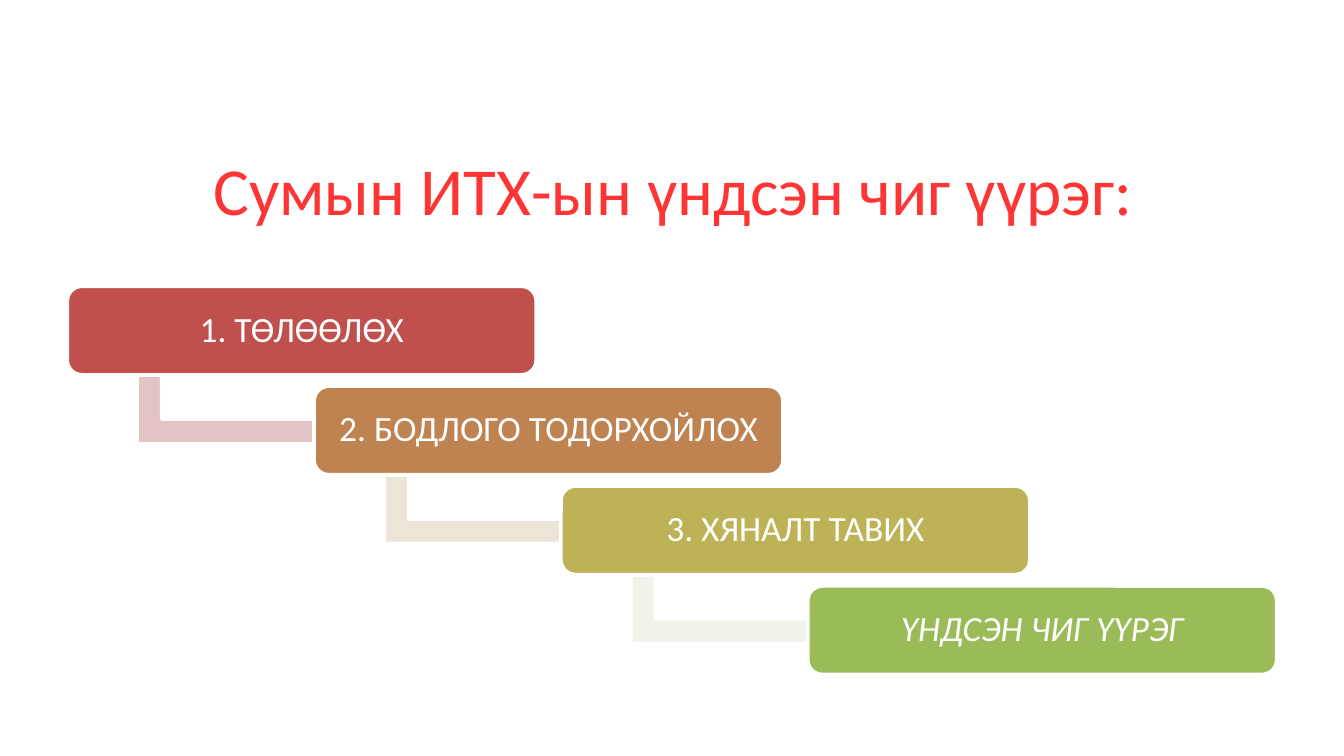
from pptx import Presentation
from pptx.dml.color import RGBColor
from pptx.enum import shapes, text
from pptx.util import Inches, Pt

WHITE = "FFFFFF"
CARD_WIDTH, CARD_HEIGHT = 3.49, 0.66
ARROW_WIDTH, ARROW_LENGTH = 0.56, 2.36

# Label, card colour, colour of the arrow to the next card, italic
STEPS = [
    ("1. ТӨЛӨӨЛӨХ", "C0504D", "E2C2C2", False),
    ("2. БОДЛОГО ТОДОРХОЙЛОХ", "BE8351", "EAE5D6", False),
    ("3. ХЯНАЛТ ТАВИХ", "BDB255", "EFF3EA", False),
    ("ҮНДСЭН ЧИГ ҮҮРЭГ", "9BBB59", None, True),
]


def color(hex_value):
    return RGBColor.from_string(hex_value)


def format_paragraph(paragraph, size, hex_value, italic=False):
    paragraph.alignment = text.PP_ALIGN.CENTER
    font = paragraph.font
    font.name, font.size, font.italic = "Calibri", Pt(size), italic
    font.color.rgb = color(hex_value)


def add_filled_shape(slide, kind, left, top, width, height, fill, adjustments):
    shape = slide.shapes.add_shape(
        kind, Inches(left), Inches(top), Inches(width), Inches(height))
    shape.shadow.inherit = False
    shape.fill.solid()
    shape.fill.fore_color.rgb = color(fill)
    shape.line.color.rgb = color(WHITE)
    shape.line.width = Pt(2)
    for index, value in enumerate(adjustments):
        shape.adjustments[index] = value
    return shape


def add_title(slide, left, top, width, height):
    title = slide.shapes.title
    title.left, title.top = Inches(left), Inches(top)
    title.width, title.height = Inches(width), Inches(height)
    frame = title.text_frame
    frame.text = "Сумын ИТХ-ын үндсэн чиг үүрэг:"
    frame.word_wrap = True
    frame.vertical_anchor = text.MSO_ANCHOR.MIDDLE
    format_paragraph(frame.paragraphs[0], 36, "FD3535")


def add_card(slide, left, top, label, fill, italic):
    card = add_filled_shape(slide, shapes.MSO_SHAPE.ROUNDED_RECTANGLE,
                            left, top, CARD_WIDTH, CARD_HEIGHT, fill, [0.167])
    frame = card.text_frame
    frame.text = label
    frame.word_wrap = True
    frame.vertical_anchor = text.MSO_ANCHOR.MIDDLE
    frame.margin_left = frame.margin_right = Inches(0.08)
    frame.margin_top = frame.margin_bottom = Inches(0.08)
    paragraph = frame.paragraphs[0]
    paragraph.line_spacing = 0.9
    format_paragraph(paragraph, 19, WHITE, italic)


def add_staircase(slide, left, top, width, height):
    step_x = (width - CARD_WIDTH) / (len(STEPS) - 1)
    step_y = (height - CARD_HEIGHT) / (len(STEPS) - 1)
    for index, (label, fill, arrow_fill, italic) in enumerate(STEPS):
        card_left, card_top = left + index * step_x, top + index * step_y
        # The arrow runs under the next card, which hides its head
        if arrow_fill:
            arrow = add_filled_shape(
                slide, shapes.MSO_SHAPE.BENT_UP_ARROW,
                card_left + 1.42, card_top - 0.24, ARROW_WIDTH, ARROW_LENGTH,
                arrow_fill, [0.328, 0.25, 0.358])
            arrow.rotation = 90
        add_card(slide, card_left, card_top, label, fill, italic)


def main():
    presentation = Presentation()
    # Widescreen, 16:9
    presentation.slide_width = Inches(10)
    presentation.slide_height = Inches(10 * 9 / 16)
    title_only = presentation.slide_layouts[5]
    slide = presentation.slides.add_slide(title_only)
    add_title(slide, 0.52, 0.98, 8.98, 0.84)
    add_staircase(slide, 0.5, 2.13, 9, 2.89)
    presentation.save("out.pptx")


if __name__ == "__main__":
    main()
